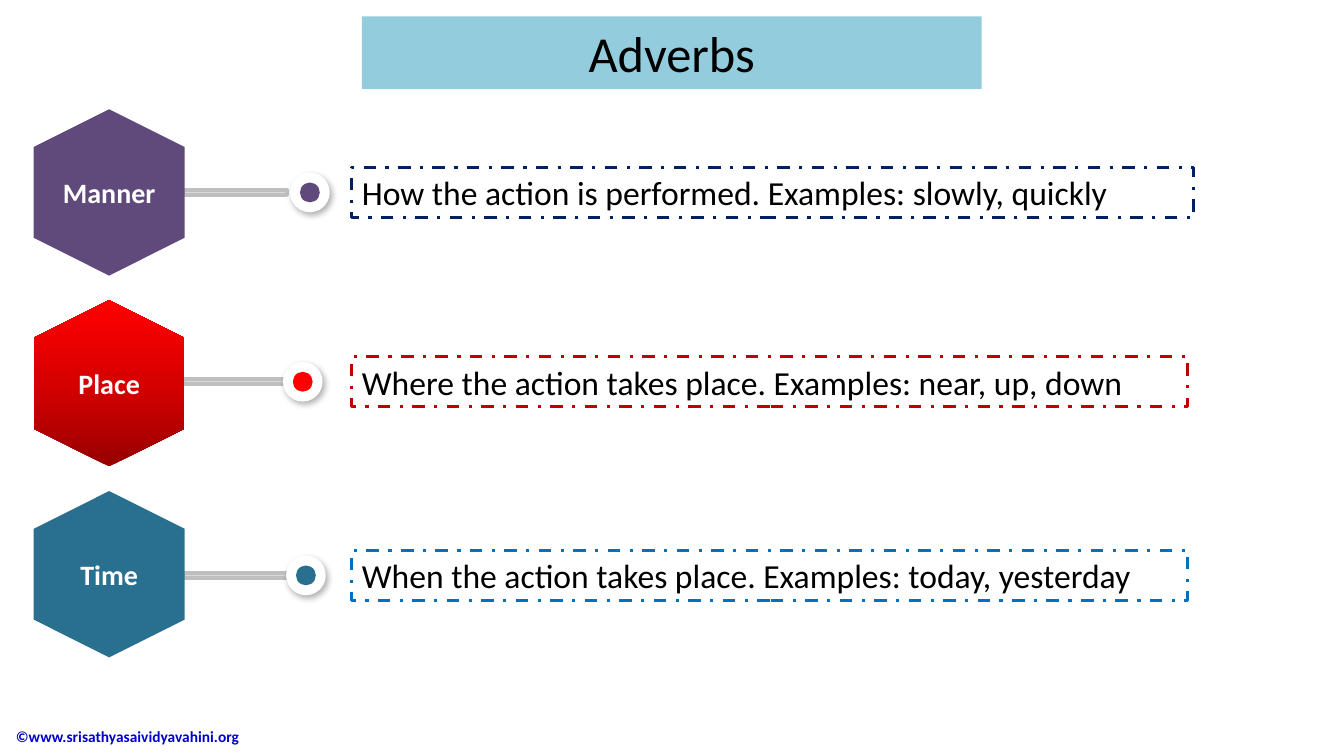
from copy import deepcopy

from lxml.etree import SubElement
from pptx import Presentation
from pptx.dml.color import RGBColor
from pptx.enum.dml import MSO_LINE
from pptx.enum.shapes import MSO_SHAPE
from pptx.enum.text import MSO_ANCHOR, PP_ALIGN
from pptx.oxml.ns import qn
from pptx.util import Cm, Pt

COLORS = {
    "black": "000000", "white": "FFFFFF", "banner": "93CDDD", "link": "0000CC",
    "bar": "D9D9D9", "bar_edge": "BFBFBF",
    "purple": "604A7B", "red": "FF0000", "teal": "296F8F",
    "navy": "002060", "crimson": "C00000", "blue": "0070C0",
    "red_dark": "970000", "red_mid": "D70000",
}
ADVERBS = [
    ("Manner", "How the action is performed. Examples: slowly, quickly",
     "purple", "navy", 4.85, 7.81, 21.21),
    ("Place", "Where the action takes place. Examples: near, up, down",
     "red", "crimson", 9.62, 7.63, 21.06),
    ("Time", "When the action takes place. Examples: today, yesterday",
     "teal", "blue", 14.5, 7.71, 21.06),
]
FIRST_HEXAGON, HEXAGON_PITCH = 4.85, 4.81


def rgb(color):
    return RGBColor.from_string(COLORS[color])


def write(holder, text, size, color="black", bold=False, align=PP_ALIGN.LEFT):
    frame = holder.text_frame
    frame.word_wrap = True
    frame.vertical_anchor = MSO_ANCHOR.MIDDLE
    paragraph = frame.paragraphs[0]
    paragraph.alignment = align
    run = paragraph.add_run()
    run.text = text
    run.font.name = "Calibri"
    run.font.size = Pt(size)
    run.font.bold = bold
    run.font.color.rgb = rgb(color)


def add_centered(shapes, preset, x, y, width, height, fill=None, edge=None, weight=0):
    shape = shapes.add_shape(preset, Cm(x - width / 2), Cm(y - height / 2),
                             Cm(width), Cm(height))
    shape.shadow.inherit = False
    if fill:
        shape.fill.solid()
        shape.fill.fore_color.rgb = rgb(fill)
    else:
        shape.fill.background()
    if edge:
        shape.line.color.rgb = rgb(edge)
        shape.line.width = Pt(weight)
    else:
        shape.line.fill.background()
    return shape


def add_soft_shadow(shape):
    effects = shape._element.spPr.find(qn("a:effectLst"))
    shadow = SubElement(effects, qn("a:outerShdw"), blurRad=str(Pt(4.5)),
                        dist=str(Pt(2.6)), dir=str(53 * 60000), rotWithShape="0")
    tint = SubElement(shadow, qn("a:srgbClr"), val=COLORS["black"])
    SubElement(tint, qn("a:alpha"), val="30000")


def shade(shape, colors):
    shape.fill.gradient()
    shape.fill.gradient_angle = 180
    first_stop = next(shape._element.spPr.iter(qn("a:gs")))
    first_stop.addnext(deepcopy(first_stop))
    for index, (stop, color) in enumerate(zip(shape.fill.gradient_stops, colors)):
        stop.position = index / (len(colors) - 1)
        stop.color.rgb = rgb(color)


def add_hexagon(shapes, label, color, y):
    hexagon = add_centered(shapes, MSO_SHAPE.HEXAGON, 2.75, y, 4.19, 3.81, color)
    hexagon.rotation = 90
    if color == "red":
        shade(hexagon, ["red_dark", "red_mid", "red"])
    write(hexagon, label, 20, "white", bold=True, align=PP_ALIGN.CENTER)
    frame = hexagon.text_frame
    frame.margin_left = frame.margin_right = frame.margin_top = frame.margin_bottom = 0
    frame._txBody.bodyPr.set("vert", "vert270")


def add_pointer(shapes, color, y, dot_x):
    add_centered(shapes, MSO_SHAPE.MATH_MINUS, 5.92, y, 3.56, 0.51,
                 "bar", "bar_edge", 3)
    ring = add_centered(shapes, MSO_SHAPE.OVAL, dot_x, y, 1, 1, "white")
    add_soft_shadow(ring)
    add_centered(shapes, MSO_SHAPE.OVAL, dot_x, y, 0.5, 0.5, color)


def add_meaning(shapes, text, color, y, width):
    meaning = add_centered(shapes, MSO_SHAPE.RECTANGLE, 8.87 + width / 2, y,
                           width, 1.27, edge=color, weight=2.25)
    meaning.line.dash_style = MSO_LINE.DASH_DOT
    write(meaning, text, 24)


def add_title(slide):
    title = slide.shapes.title
    title.left, title.top = Cm(9.12), Cm(0.41)
    title.width, title.height = Cm(15.62), Cm(1.83)
    title.fill.solid()
    title.fill.fore_color.rgb = rgb("banner")
    write(title, "Adverbs", 36, align=PP_ALIGN.CENTER)


def main():
    deck = Presentation()
    deck.slide_width, deck.slide_height = Cm(33.87), Cm(19.05)
    slide = deck.slides.add_slide(deck.slide_layouts[5])
    copyright_line = slide.shapes.add_textbox(Cm(0.15), Cm(18.03), Cm(8.97), Cm(1.04))
    write(copyright_line, "©www.srisathyasaividyavahini.org", 11, "link", bold=True)
    add_title(slide)
    for row, (label, text, color, edge, y, dot_x, width) in enumerate(ADVERBS):
        marker = slide.shapes.add_group_shape()
        add_pointer(marker.shapes, color, y, dot_x)
        add_hexagon(marker.shapes, label, color, FIRST_HEXAGON + row * HEXAGON_PITCH)
        add_meaning(slide.shapes, text, edge, y, width)
    deck.save("out.pptx")


if __name__ == "__main__":
    main()
